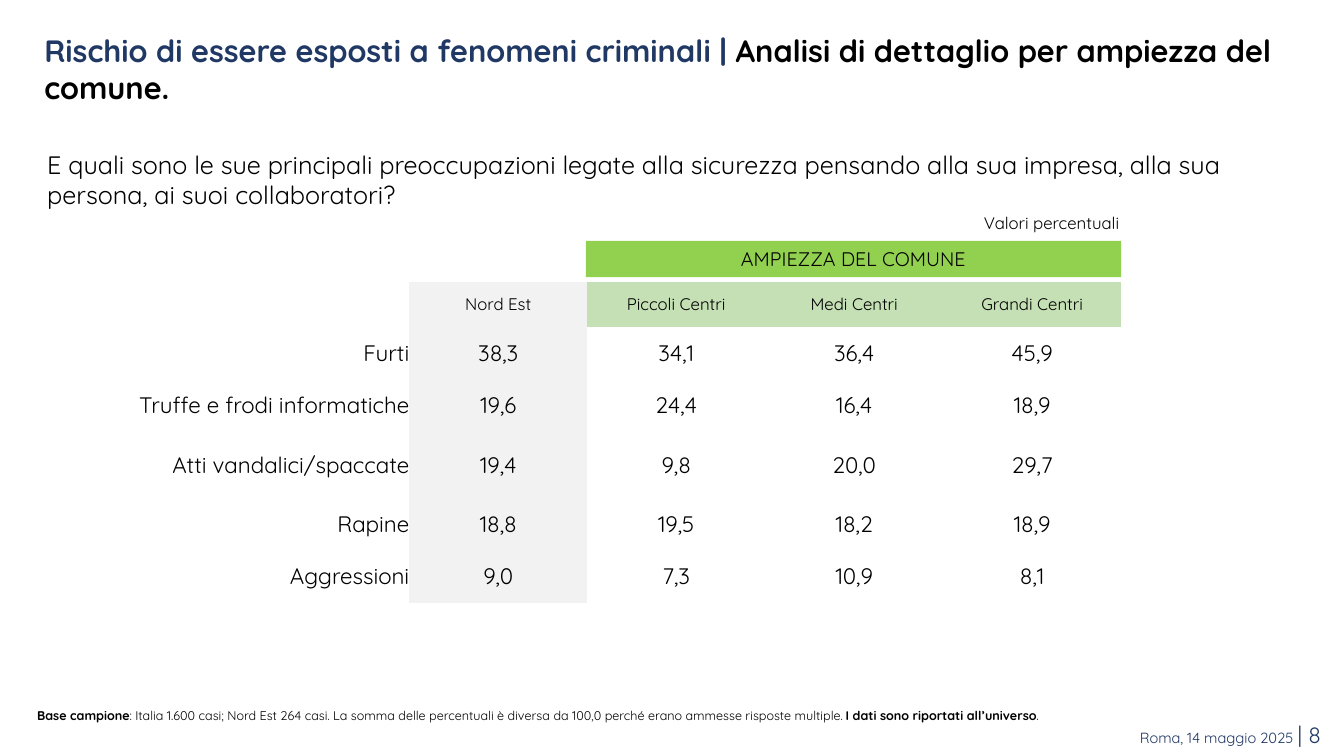
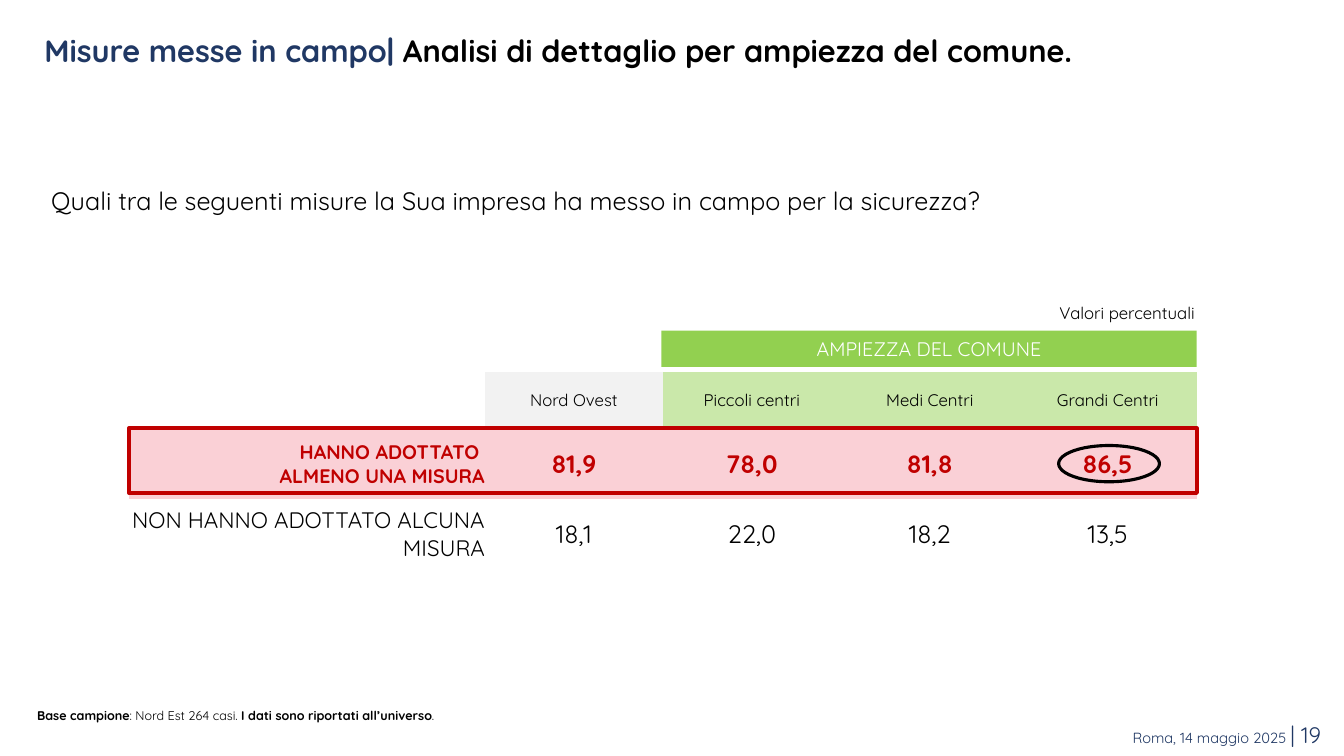
from dataclasses import dataclass
from typing import NamedTuple, Optional

from pptx import Presentation
from pptx.dml.color import RGBColor
from pptx.enum.shapes import MSO_SHAPE
from pptx.enum.text import MSO_ANCHOR, PP_ALIGN
from pptx.util import Inches, Pt

FONT = "Quicksand"
NO_GRID_STYLE = "{2D5ABB26-0587-4C30-8999-92F81FD0307C}"
COLORS = {
    "navy": "203864",
    "black": "000000",
    "white": "FFFFFF",
    "grey": "F2F2F2",
    "banner": "92D050",
    "sage": "C5E0B4",
    "lime": "CAE8AA",
    "red": "C00000",
    "pink": "FAD0D6",
}
TABLE_WIDTH = 10.59
LABEL_WIDTH = 3.53
VALUE_COLUMNS = 4
VALUE_WIDTH = (TABLE_WIDTH - LABEL_WIDTH) / VALUE_COLUMNS


class Box(NamedTuple):
    left: float
    top: float
    width: float
    height: float


class Row(NamedTuple):
    label: str
    values: tuple[str, ...]
    height: float
    label_size: float = 16
    value_size: float = 16
    color: str = "black"
    bold: bool = False
    fill: Optional[str] = None
    first_fill: Optional[str] = None


@dataclass
class DetailSlide:
    number: int
    topic: str
    title_height: float
    question: str
    question_box: Box
    table_left: float
    table_top: float
    banner_color: str
    header_fill: str
    headers: tuple[str, ...]
    header_height: float
    rows: list[Row]
    sample: str


def color_of(name: str) -> RGBColor:
    return RGBColor.from_string(COLORS[name])


def write(paragraph, text: str, *, size: float, color: str = "black",
          bold: bool = False, alignment=PP_ALIGN.LEFT) -> None:
    paragraph.alignment = alignment
    run = paragraph.add_run()
    run.text = text
    run.font.name = FONT
    run.font.size = Pt(size)
    run.font.bold = bold
    run.font.color.rgb = color_of(color)


def add_text_box(slide, box: Box):
    shape = slide.shapes.add_textbox(*map(Inches, box))
    shape.text_frame.word_wrap = True
    return shape.text_frame.paragraphs[0]


def add_shape(slide, kind, box: Box, fill: Optional[str] = None,
              line: Optional[str] = None, line_width: float = 0):
    shape = slide.shapes.add_shape(kind, *map(Inches, box))
    shape.shadow.inherit = False
    if fill:
        shape.fill.solid()
        shape.fill.fore_color.rgb = color_of(fill)
    else:
        shape.fill.background()
    if line:
        shape.line.color.rgb = color_of(line)
        shape.line.width = Pt(line_width)
    else:
        shape.line.fill.background()
    return shape


def fill_cell(cell, text: str, fill: Optional[str], **text_format) -> None:
    cell.margin_left = cell.margin_right = cell.margin_top = cell.margin_bottom = 0
    cell.vertical_anchor = MSO_ANCHOR.MIDDLE
    if fill:
        cell.fill.solid()
        cell.fill.fore_color.rgb = color_of(fill)
    else:
        cell.fill.background()
    for index, line in enumerate(text.split("\n")):
        frame = cell.text_frame
        paragraph = frame.add_paragraph() if index else frame.paragraphs[0]
        write(paragraph, line, **text_format)


def add_table(slide, detail: DetailSlide) -> None:
    heights = [detail.header_height] + [row.height for row in detail.rows]
    frame = slide.shapes.add_table(
        len(heights), VALUE_COLUMNS + 1, Inches(detail.table_left),
        Inches(detail.table_top), Inches(TABLE_WIDTH), Inches(sum(heights)))
    table = frame.table
    table.first_row = table.horz_banding = False
    table._tbl.tblPr[0].text = NO_GRID_STYLE
    for index, column in enumerate(table.columns):
        column.width = Inches(VALUE_WIDTH if index else LABEL_WIDTH)
    for table_row, height in zip(table.rows, heights):
        table_row.height = Inches(height)

    fills = ["white", "grey"] + [detail.header_fill] * (VALUE_COLUMNS - 1)
    for index, (text, fill) in enumerate(zip(("",) + detail.headers, fills)):
        fill_cell(table.cell(0, index), text, fill, size=12, alignment=PP_ALIGN.CENTER)
    for row_index, row in enumerate(detail.rows, 1):
        fill_cell(table.cell(row_index, 0), row.label, row.fill, size=row.label_size,
                  color=row.color, bold=row.bold, alignment=PP_ALIGN.RIGHT)
        for index, value in enumerate(row.values, 1):
            fill = row.first_fill if index == 1 and row.first_fill else row.fill
            fill_cell(table.cell(row_index, index), value, fill, size=row.value_size,
                      color=row.color, bold=row.bold, alignment=PP_ALIGN.CENTER)


def add_frame(slide, detail: DetailSlide) -> None:
    footer = add_text_box(slide, Box(6.27, 7.11, 6.93, 0.37))
    write(footer, "Roma, 14 maggio 2025 ", size=10.5, color="navy", alignment=PP_ALIGN.RIGHT)
    write(footer, f"| {detail.number}", size=16, color="navy", alignment=PP_ALIGN.RIGHT)

    title_box = slide.shapes.add_textbox(
        *map(Inches, Box(0.37, 0.27, 12.91, detail.title_height)))
    title_frame = title_box.text_frame
    title_frame.word_wrap = True
    title_frame.margin_left = title_frame.margin_right = Inches(0.07)
    title_frame.margin_top = title_frame.margin_bottom = Inches(0.04)
    title = title_frame.paragraphs[0]
    write(title, detail.topic, size=22, color="navy", bold=True)
    write(title, " Analisi di dettaglio per ampiezza del comune.", size=22, bold=True)

    write(add_text_box(slide, detail.question_box), detail.question, size=18)

    note = add_text_box(slide, Box(0.27, 6.96, 12.55, 0.25))
    note.line_spacing = 1.1
    for text, bold in (("Base campione", True), (detail.sample, False),
                       ("I dati sono riportati all’universo", True), (".", False)):
        write(note, text, size=9, bold=bold, alignment=PP_ALIGN.JUSTIFY)


def add_detail_slide(presentation, detail: DetailSlide):
    slide = presentation.slides.add_slide(presentation.slide_layouts[6])
    add_frame(slide, detail)
    left, top = detail.table_left, detail.table_top
    banner = add_shape(slide, MSO_SHAPE.RECTANGLE,
                       Box(left + 5.28, top - 0.41, 5.31, 0.36), fill="banner")
    banner.text_frame.vertical_anchor = MSO_ANCHOR.MIDDLE
    write(banner.text_frame.paragraphs[0], "AMPIEZZA DEL COMUNE", size=14,
          color=detail.banner_color, alignment=PP_ALIGN.CENTER)
    add_table(slide, detail)
    unit = add_text_box(slide, Box(left + 8.52, top - 0.74, 2.15, 0.3))
    write(unit, "Valori percentuali", size=12, alignment=PP_ALIGN.RIGHT)
    return slide


def main() -> None:
    presentation = Presentation()
    presentation.slide_width = Inches(13.33)
    presentation.slide_height = Inches(7.5)

    crimes = [
        ("Furti", ("38,3", "34,1", "36,4", "45,9"), 0.52),
        ("Truffe e frodi informatiche", ("19,6", "24,4", "16,4", "18,9"), 0.52),
        ("Atti vandalici/spaccate", ("19,4", "9,8", "20,0", "29,7"), 0.66),
        ("Rapine", ("18,8", "19,5", "18,2", "18,9"), 0.52),
        ("Aggressioni", ("9,0", "7,3", "10,9", "8,1"), 0.52),
    ]
    add_detail_slide(presentation, DetailSlide(
        number=8,
        topic="Rischio di essere esposti a fenomeni criminali |",
        title_height=0.82,
        question="E quali sono le sue principali preoccupazioni legate alla sicurezza "
                 "pensando alla sua impresa, alla sua persona, ai suoi collaboratori?",
        question_box=Box(0.37, 1.43, 12.67, 0.71),
        table_left=0.53,
        table_top=2.8,
        banner_color="black",
        header_fill="sage",
        headers=("Nord Est", "Piccoli Centri", "Medi Centri", "Grandi Centri"),
        header_height=0.44,
        rows=[Row(*crime, first_fill="grey") for crime in crimes],
        sample=": Italia 1.600 casi; Nord Est 264 casi. La somma delle percentuali è "
               "diversa da 100,0 perché erano ammesse risposte multiple. ",
    ))

    measures = DetailSlide(
        number=19,
        topic="Misure messe in campo|",
        title_height=0.45,
        question="Quali tra le seguenti misure la Sua impresa ha messo in campo "
                 "per la sicurezza?",
        question_box=Box(0.41, 1.79, 12.67, 0.4),
        table_left=1.28,
        table_top=3.69,
        banner_color="white",
        header_fill="lime",
        headers=("Nord Ovest", "Piccoli centri", "Medi Centri", "Grandi Centri"),
        header_height=0.57,
        rows=[
            Row("HANNO ADOTTATO \nALMENO UNA MISURA", ("81,9", "78,0", "81,8", "86,5"),
                0.69, label_size=14, value_size=18, color="red", bold=True, fill="pink"),
            Row("NON HANNO ADOTTATO ALCUNA MISURA", ("18,1", "22,0", "18,2", "13,5"),
                0.69, value_size=18),
        ],
        sample=": Nord Est 264 casi. ",
    )
    slide = add_detail_slide(presentation, measures)
    add_shape(slide, MSO_SHAPE.RECTANGLE,
              Box(measures.table_left, 4.25, TABLE_WIDTH, 0.64), line="red", line_width=3)
    add_shape(slide, MSO_SHAPE.OVAL, Box(10.5, 4.42, 1, 0.36), line="black", line_width=2.25)

    presentation.save("out.pptx")


if __name__ == "__main__":
    main()
